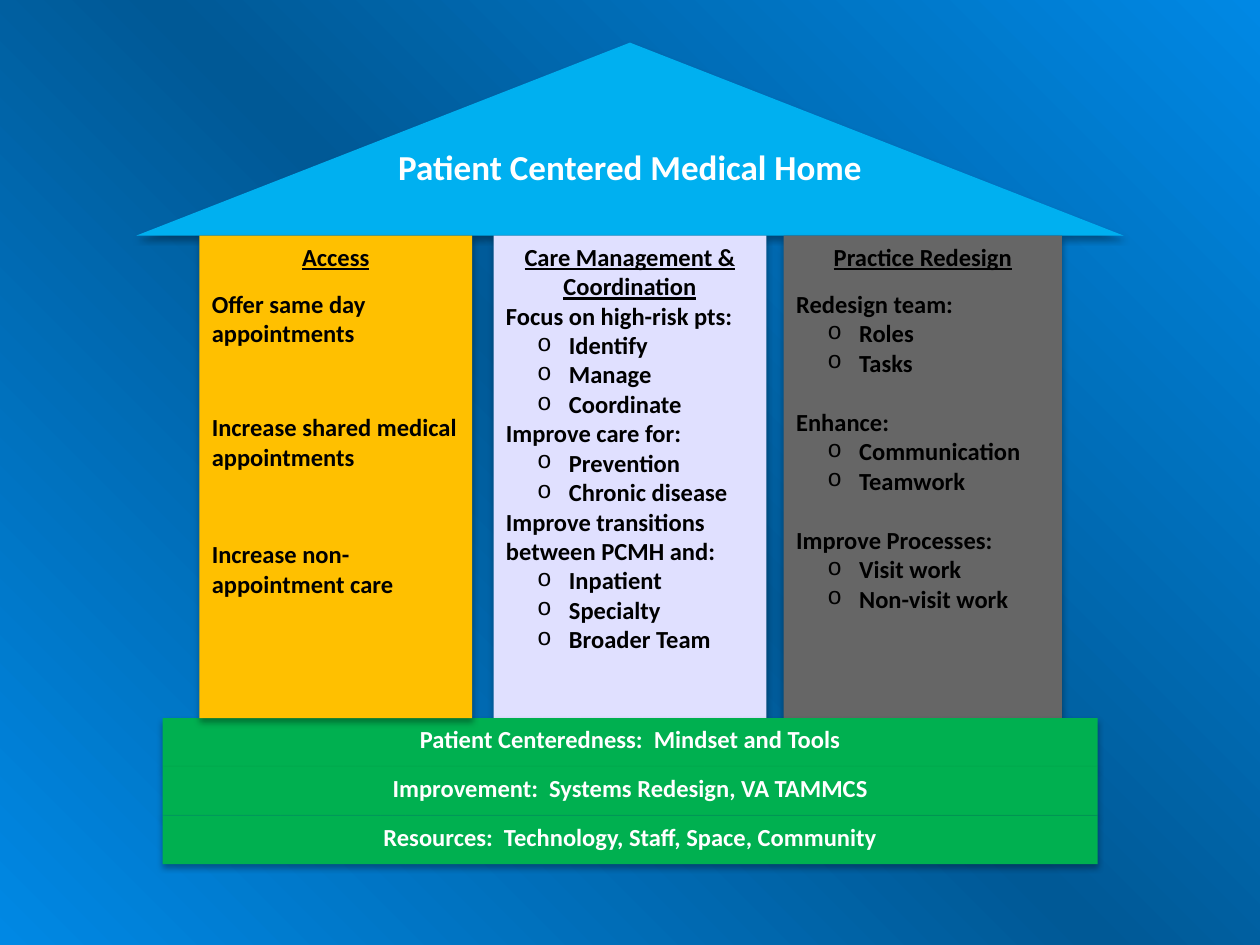
import copy

import pptx
import pptx.dml.color
import pptx.enum.shapes
import pptx.enum.text
import pptx.oxml
import pptx.oxml.ns
import pptx.util
from lxml import etree

Cm = pptx.util.Cm
Pt = pptx.util.Pt
qn = pptx.oxml.ns.qn
Shapes = pptx.enum.shapes.MSO_SHAPE
Align = pptx.enum.text.PP_ALIGN

FONT = "Calibri"
COLORS = {
    "sky": "0088E4",
    "deep": "005996",
    "roof": "00B0F0",
    "access": "FFC000",
    "care": "E0E0FF",
    "practice": "666666",
    "foundation": "00B050",
    "light": "FFFFFF",
    "dark": "000000",
}

# Pillar text: (kind, text, space before in points)
ACCESS = [
    ("text", "Offer same day appointments", 10),
    ("text", "Increase shared medical appointments", 37),
    ("text", "Increase non-appointment care", 39),
]
CARE = [
    ("text", "Focus on high-risk pts:", 0),
    ("bullet", "Identify", 0),
    ("bullet", "Manage", 0),
    ("bullet", "Coordinate", 0),
    ("text", "Improve care for:", 0),
    ("bullet", "Prevention", 0),
    ("bullet", "Chronic disease", 0),
    ("text", "Improve transitions between PCMH and:", 0),
    ("bullet", "Inpatient", 0),
    ("bullet", "Specialty", 0),
    ("bullet", "Broader Team", 0),
]
PRACTICE = [
    ("text", "Redesign team:", 10),
    ("bullet", "Roles", 0),
    ("bullet", "Tasks", 0),
    ("text", "Enhance:", 17),
    ("bullet", "Communication", 0),
    ("bullet", "Teamwork", 0),
    ("text", "Improve Processes:", 17),
    ("bullet", "Visit work", 0),
    ("bullet", "Non-visit work", 0),
]
FOUNDATION = [
    "Patient Centeredness:  Mindset and Tools",
    "Improvement:  Systems Redesign, VA TAMMCS",
    "Resources:  Technology, Staff, Space, Community",
]


def rgb(name):
    return pptx.dml.color.RGBColor.from_string(COLORS[name])


def add_shadow(shape):
    """Give the shape a soft shadow straight below it."""
    shape.shadow.inherit = False
    effects = shape._element.spPr.find(qn("a:effectLst"))
    shadow = etree.SubElement(
        effects, qn("a:outerShdw"), blurRad=str(Pt(3.5)), dist=str(Pt(2.2)),
        dir="5400000", rotWithShape="0")
    color = etree.SubElement(shadow, qn("a:srgbClr"), val=COLORS["dark"])
    etree.SubElement(color, qn("a:alpha"), val="32000")


def add_block(slide, kind, box, fill):
    """Add a filled shape in box (left, top, width, height in cm)."""
    shape = slide.shapes.add_shape(kind, *(Cm(length) for length in box))
    shape.fill.solid()
    shape.fill.fore_color.rgb = rgb(fill)
    shape.line.fill.background()
    add_shadow(shape)
    shape.text_frame.word_wrap = True
    shape.text_frame.vertical_anchor = pptx.enum.text.MSO_ANCHOR.TOP
    return shape


def write(paragraph, text, color, size=14, align=Align.CENTER, underline=False):
    paragraph.alignment = align
    run = paragraph.add_run()
    run.text = text
    run.font.name = FONT
    run.font.size = Pt(size)
    run.font.bold = True
    run.font.underline = underline
    run.font.color.rgb = rgb(color)


def add_bullet(paragraph):
    properties = paragraph._p.get_or_add_pPr()
    properties.set("marL", str(Cm(1.27)))
    properties.set("indent", str(-Cm(0.64)))
    etree.SubElement(properties, qn("a:buFont"), typeface="Courier New")
    etree.SubElement(properties, qn("a:buChar"), char="o")


def paint_background(slide):
    fill = slide.background.fill
    fill.gradient()
    fill.gradient_angle = 45
    stop_list = next(slide._element.iter(qn("a:gsLst")))
    stop_list.append(copy.deepcopy(stop_list[-1]))
    stops = ((0, "sky"), (0.5, "deep"), (1, "sky"))
    for stop, (position, color) in zip(fill.gradient_stops, stops):
        stop.position = position
        stop.color.rgb = rgb(color)


def add_roof(slide, box):
    roof = add_block(slide, Shapes.ISOSCELES_TRIANGLE, box, "roof")
    write(roof.text_frame.paragraphs[0], "Patient Centered Medical Home", "light", size=20)


def add_pillar(slide, box, fill, heading, items):
    frame = add_block(slide, Shapes.RECTANGLE, box, fill).text_frame
    write(frame.paragraphs[0], heading, "dark", underline=True)
    for kind, text, space in items:
        paragraph = frame.add_paragraph()
        if kind == "bullet":
            add_bullet(paragraph)
        paragraph.space_before = Pt(space)
        write(paragraph, text, "dark", align=Align.LEFT)


def add_foundation(slide, box):
    left, top, width, height = box
    row = height / len(FOUNDATION)
    for index, text in enumerate(FOUNDATION):
        bar = add_block(slide, Shapes.RECTANGLE,
                        (left, top + index * row, width, row), "foundation")
        write(bar.text_frame.paragraphs[0], text, "light")


def main():
    presentation = pptx.Presentation()
    presentation.slide_width = Cm(25.4)
    presentation.slide_height = Cm(19.05)
    slide = presentation.slides.add_slide(presentation.slide_layouts[6])
    paint_background(slide)

    eaves, floor = 4.75, 14.48
    wall = floor - eaves

    add_roof(slide, (2.75, 0.86, 19.9, eaves - 0.86))
    add_pillar(slide, (15.8, eaves, 5.61, wall), "practice", "Practice Redesign", PRACTICE)
    add_pillar(slide, (9.95, eaves, 5.5, wall), "care", "Care Management & Coordination", CARE)
    add_foundation(slide, (3.28, floor, 18.85, 2.94))
    # The first pillar stands in front of the foundation
    add_pillar(slide, (4.02, eaves, 5.5, wall), "access", "Access", ACCESS)

    presentation.save("out.pptx")


if __name__ == "__main__":
    main()
